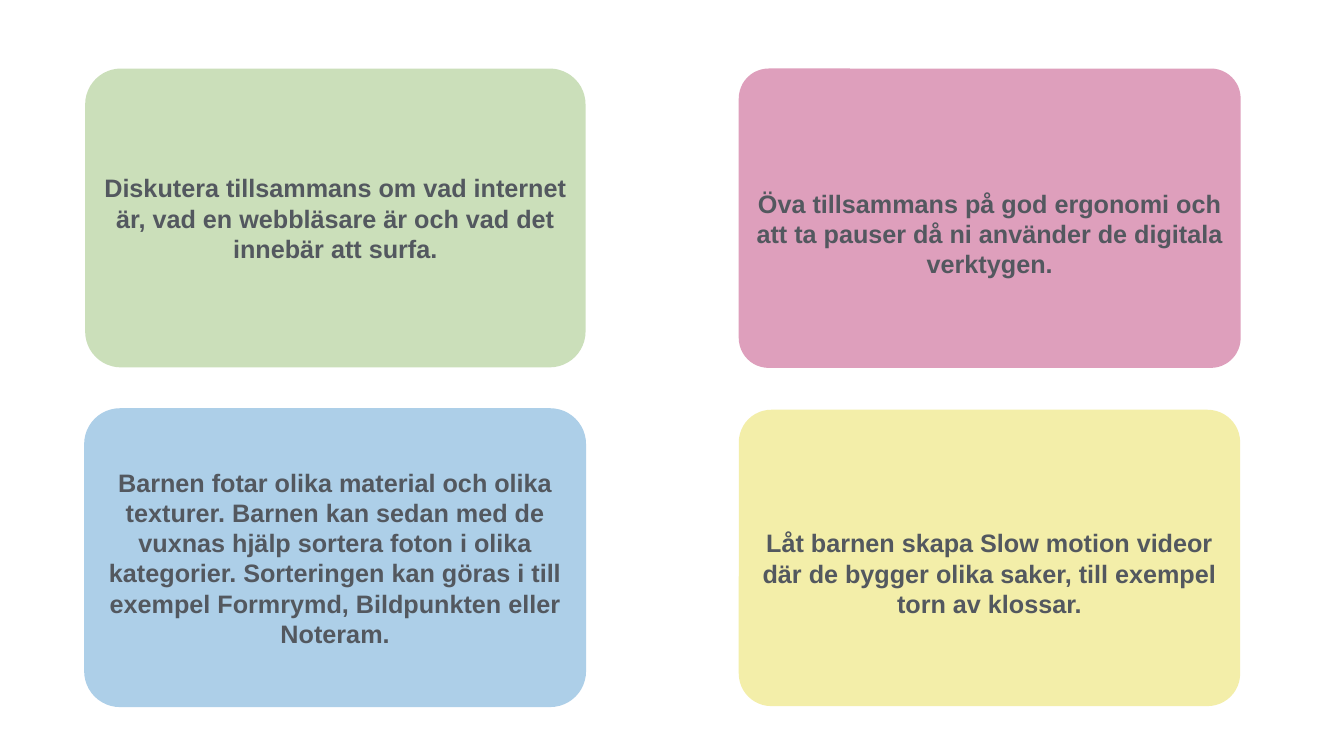
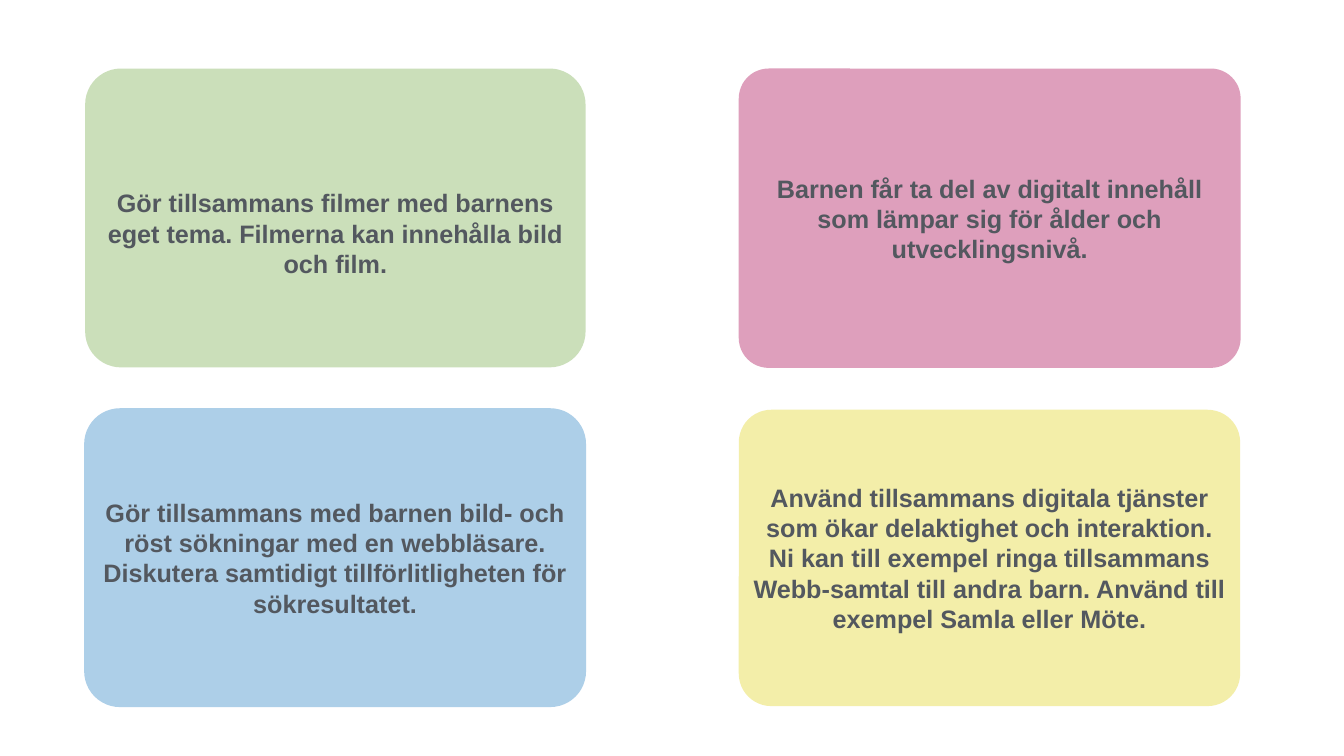
from pptx import Presentation
from pptx.dml.color import RGBColor
from pptx.enum import shapes, text
from pptx.util import Emu, Pt

EMU_PER_PX = 9144
SLIDE_SIZE = (2667, 1500)
INSET = 6
LINE_HEIGHT = 60
INK = "53585F"

CARDS = {
    "green": {"box": (169, 136, 993, 593), "rounding": 0.12, "fill": "CBDFBA"},
    "blue": {"box": (167, 810, 996, 593), "rounding": 0.12, "fill": "ADCFE8"},
    "yellow": {"box": (1466, 813, 995, 588), "rounding": 0.11, "fill": "F3EEA9"},
    "pink": {"box": (1466, 136, 996, 594), "rounding": 0.1, "fill": "DE9FBC"},
}

ACTIVITY_SLIDES = [
    {
        "green": ("Diskutera tillsammans om vad internet är, vad en webbläsare är "
                  "och vad det innebär att surfa.", 0),
        "blue": ("Barnen fotar olika material och olika texturer. Barnen kan sedan "
                 "med de vuxnas hjälp sortera foton i olika kategorier. Sorteringen "
                 "kan göras i till exempel Formrymd, Bildpunkten eller Noteram.", 0),
        "yellow": ("Låt barnen skapa Slow motion videor där de bygger olika saker, "
                   "till exempel torn av klossar.", 1),
        "pink": ("Öva tillsammans på god ergonomi och att ta pauser då ni använder "
                 "de digitala verktygen.", 1),
    },
    {
        "green": ("Gör tillsammans filmer med barnens eget tema. Filmerna kan "
                  "innehålla bild och film.", 1),
        "blue": ("Gör tillsammans med barnen bild- och röst sökningar med en "
                 "webbläsare. Diskutera samtidigt tillförlitligheten för "
                 "sökresultatet.", 0),
        "yellow": ("Använd tillsammans digitala tjänster som ökar delaktighet och "
                   "interaktion. Ni kan till exempel ringa tillsammans Webb-samtal "
                   "till andra barn. Använd till exempel Samla eller Möte.", 0),
        "pink": ("Barnen får ta del av digitalt innehåll som lämpar sig för ålder "
                 "och utvecklingsnivå.", 0),
    },
]


def px(length):
    return Emu(length * EMU_PER_PX)


def color(hex_value):
    return RGBColor.from_string(hex_value)


def apply(target, values):
    for name, value in values.items():
        setattr(target, name, value)


def add_card(slide, box, rounding, fill, activity, lowered_lines):
    card = slide.shapes.add_shape(
        shapes.MSO_SHAPE.ROUNDED_RECTANGLE, *map(px, box))
    card.adjustments[0] = rounding
    card.shadow.inherit = False
    card.fill.solid()
    card.fill.fore_color.rgb = color(fill)
    card.line.fill.background()

    frame = card.text_frame
    apply(frame, {
        "word_wrap": True,
        "vertical_anchor": text.MSO_ANCHOR.MIDDLE,
        "margin_left": px(INSET),
        "margin_right": px(INSET),
        "margin_top": px(INSET + lowered_lines * LINE_HEIGHT),
        "margin_bottom": px(INSET),
    })
    paragraph = frame.paragraphs[0]
    paragraph.alignment = text.PP_ALIGN.CENTER
    run = paragraph.add_run()
    run.text = activity
    apply(run.font, {"name": "Arial", "size": Pt(36), "bold": True})
    run.font.color.rgb = color(INK)


def add_activity_slide(deck, activities):
    slide = deck.slides.add_slide(deck.slide_layouts[6])
    for card_name, (activity, lowered_lines) in activities.items():
        add_card(slide, **CARDS[card_name], activity=activity,
                 lowered_lines=lowered_lines)


def main():
    deck = Presentation()
    deck.slide_width, deck.slide_height = map(px, SLIDE_SIZE)
    for activities in ACTIVITY_SLIDES:
        add_activity_slide(deck, activities)
    deck.save("out.pptx")


if __name__ == "__main__":
    main()
